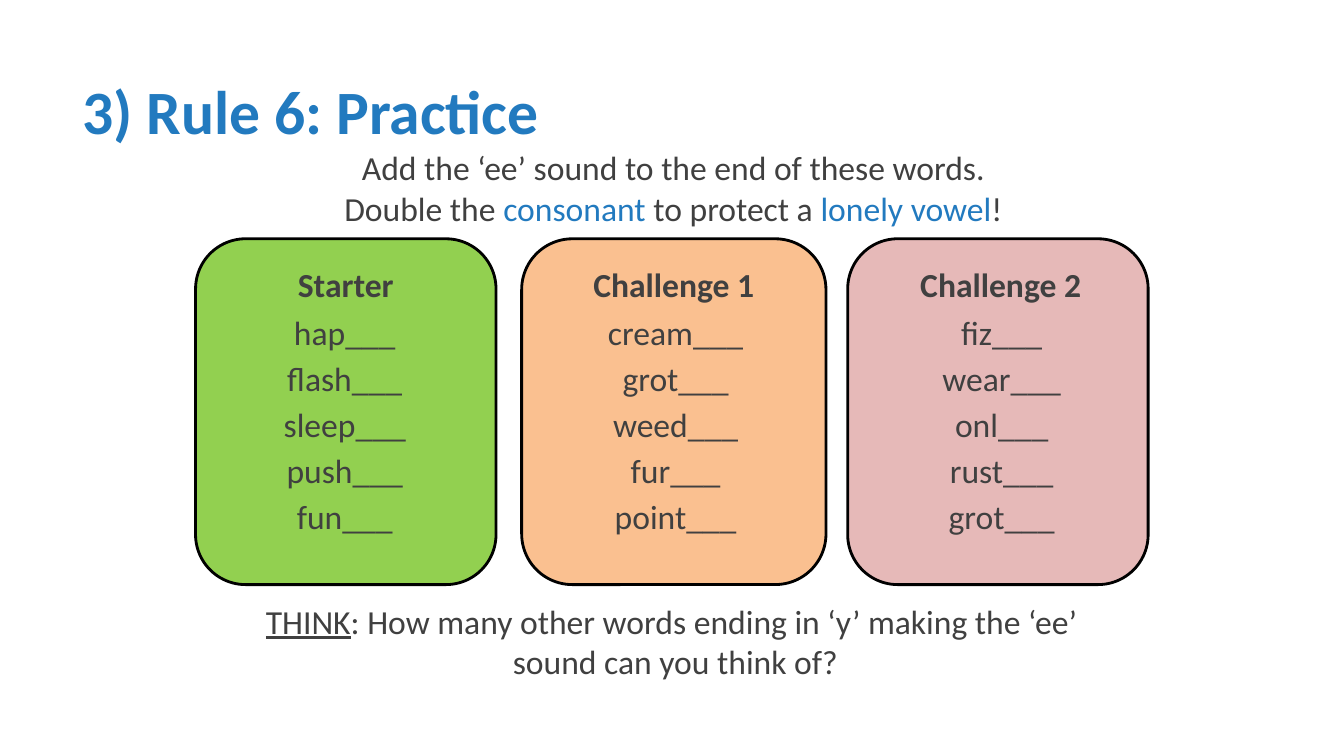
from collections import namedtuple
from dataclasses import dataclass

from pptx import Presentation
from pptx import util as u
from pptx.dml.color import RGBColor
from pptx.enum import shapes, text

Pt = u.Pt
Box = namedtuple("Box", "left top width height")


@dataclass(frozen=True)
class Theme:
    font: str = "Calibri"
    title_size: int = 44
    text_size: int = 24
    ink: str = "404040"
    accent: str = "227ABF"
    outline: str = "000000"
    green: str = "92D050"
    orange: str = "FAC090"
    pink: str = "E6B9B8"


THEME = Theme()
CENTER = {"alignment": text.PP_ALIGN.CENTER}
WORD_LIST = {**CENTER, "line_spacing": 1.14}


def rgb(value):
    return RGBColor.from_string(value)


def apply(target, values):
    for name, value in values.items():
        setattr(target, name, value)


def add_text(slide, box, paragraphs, layout, wrap=True, anchor=text.MSO_ANCHOR.TOP):
    frame = slide.shapes.add_textbox(*map(Pt, box)).text_frame
    apply(frame, {"word_wrap": wrap, "vertical_anchor": anchor})
    for index, runs in enumerate(paragraphs):
        paragraph = frame.paragraphs[0] if index == 0 else frame.add_paragraph()
        apply(paragraph, layout)
        for words, changes in runs:
            if words == "\n":
                paragraph.add_line_break()
                continue
            values = {"name": THEME.font, "size": Pt(THEME.text_size), **changes}
            color = values.pop("color", THEME.ink)
            run = paragraph.add_run()
            run.text = words
            apply(run.font, values)
            run.font.color.rgb = rgb(color)


def add_title(slide, box):
    style = {"size": Pt(THEME.title_size), "bold": True, "color": THEME.accent}
    add_text(slide, box, [[("3) Rule 6: Practice", style)]], {},
             anchor=text.MSO_ANCHOR.MIDDLE)


def add_instructions(slide, box):
    accent = {"color": THEME.accent}
    add_text(slide, box, [
        [("Add the ‘ee’ sound to the end of these words.", {})],
        [("Double the ", {}), ("consonant", accent), (" to protect a ", {}),
         ("lonely vowel", accent), ("!", {})],
    ], CENTER)


def add_card(slide, box, heading, fill, words, list_width, heading_shift):
    card = slide.shapes.add_shape(
        shapes.MSO_SHAPE.ROUNDED_RECTANGLE, *map(Pt, box))
    card.shadow.inherit = False
    card.fill.solid()
    card.fill.fore_color.rgb = rgb(fill)
    card.line.color.rgb = rgb(THEME.outline)
    card.line.width = Pt(2)

    heading_box = Box(box.left + heading_shift, box.top + 14.4, box.width, 36)
    add_text(slide, heading_box, [[(heading, {"bold": True})]], CENTER, wrap=False)
    list_box = Box(box.left + 6, box.top + 44.6, list_width, 171)
    add_text(slide, list_box, [[(word + "___", {})] for word in words], WORD_LIST)


def add_cards(slide, box):
    cards = [
        ("Starter", THEME.green, ["hap", "flash", "sleep", "push", "fun"],
         214.6, 201, 0),
        ("Challenge 1", THEME.orange, ["cream", "grot", "weed", "fur", "point"],
         217.4, 208, 0),
        ("Challenge 2", THEME.pink, ["fiz", "wear", "onl", "rust", "grot"],
         214.6, 208, 2),
    ]
    pitch = (box.width - cards[-1][3]) / (len(cards) - 1)
    for index, (heading, fill, words, width, list_width, shift) in enumerate(cards):
        card_box = Box(box.left + index * pitch, box.top, width, box.height)
        add_card(slide, card_box, heading, fill, words, list_width, shift)


def add_think_question(slide, box):
    add_text(slide, box, [[
        ("THINK", {"underline": True}),
        (": How many other words ending in ‘y’ making the ‘ee’ ", {}),
        ("\n", {}),
        ("sound can you think of?", {}),
    ]], CENTER)


def main():
    presentation = Presentation()
    apply(presentation, {"slide_width": Pt(960), "slide_height": Pt(540)})
    slide = presentation.slides.add_slide(presentation.slide_layouts[6])
    add_cards(slide, Box(139.7, 170.6, 680.4, 247))
    add_think_question(slide, Box(122.4, 425.5, 720, 65.5))
    add_instructions(slide, Box(121, 101.5, 720, 65.5))
    add_title(slide, Box(51.8, 26.6, 828, 104.4))
    presentation.save("out.pptx")


if __name__ == "__main__":
    main()
